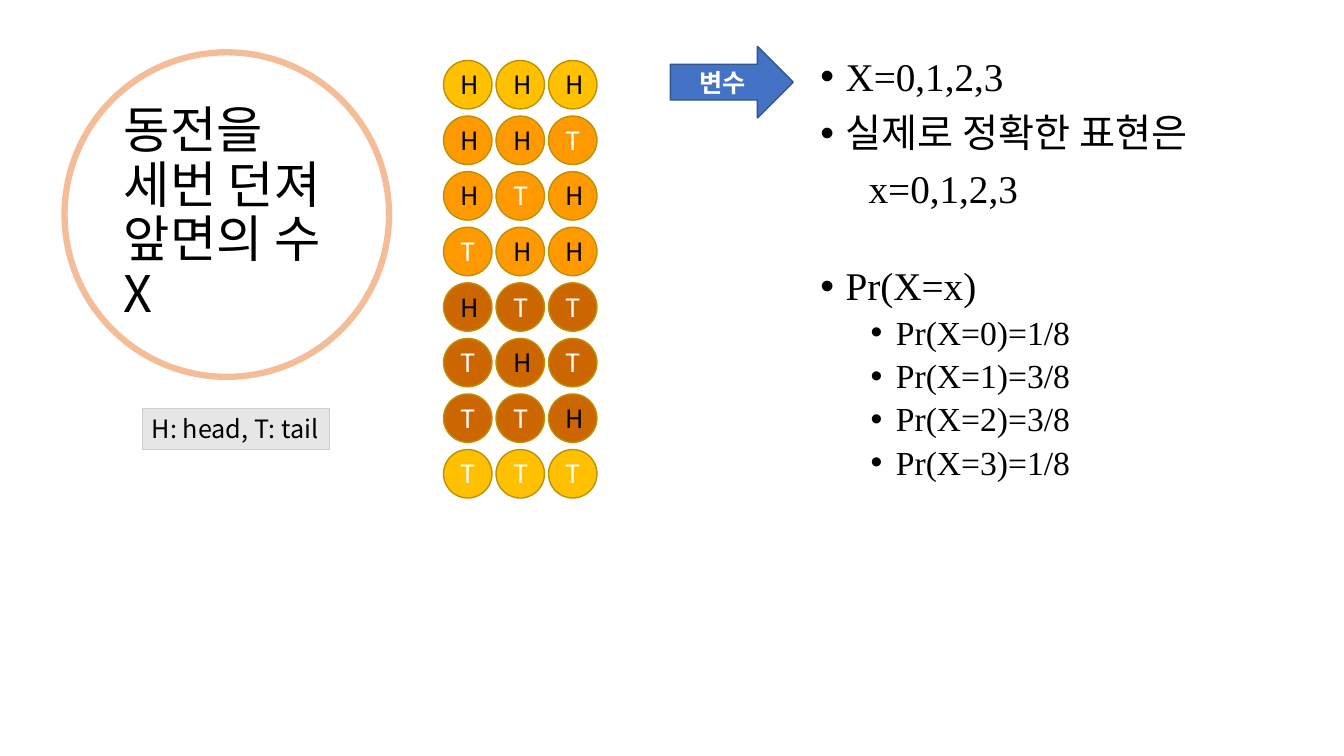
from pptx import Presentation
from pptx.dml.color import RGBColor
from pptx.enum.shapes import MSO_SHAPE
from pptx.enum.text import MSO_ANCHOR, PP_ALIGN
from pptx.oxml.ns import qn
from pptx.util import Pt
from lxml import etree

OVAL, RECTANGLE, ARROW = MSO_SHAPE.OVAL, MSO_SHAPE.RECTANGLE, MSO_SHAPE.RIGHT_ARROW
MIDDLE, TOP = MSO_ANCHOR.MIDDLE, MSO_ANCHOR.TOP
LEFT, CENTER = PP_ALIGN.LEFT, PP_ALIGN.CENTER
SANS, SERIF = "Noto Sans CJK KR", "Times New Roman"
COLORS = {
    "black": "000000", "white": "FFFFFF", "ring": "ED7D31",
    "arrow": "4472C4", "arrow_edge": "325491", "coin_edge": "BF9000",
    "gold": "FFC000", "orange": "FF9900", "brown": "CC6600",
    "legend": "E7E6E6", "legend_edge": "D0CECE",
}

TITLE = "동전을\v세번 던져\v앞면의 수\vX"
LEGEND = "H: head, T: tail"
ARROW_LABEL = "변수"
TOSSES = [
    ("HHH", "gold"), ("HHT", "orange"), ("HTH", "orange"), ("THH", "orange"),
    ("HTT", "brown"), ("THT", "brown"), ("TTH", "brown"), ("TTT", "gold"),
]
# text, size, left margin, first-line indent, space before, bulleted
NOTES = [
    ("X=0,1,2,3", 28, 18, -18, 10, True),
    ("실제로 정확한 표현은", 28, 18, -18, 10, True),
    ("x=0,1,2,3", 28, 34.5, 0, 10, False),
    ("Pr(X=x)", 28, 18, -18, 39, True),
] + [(f"Pr(X={heads})={ways}/8", 24, 54, -18, 5, True)
     for heads, ways in enumerate((1, 3, 3, 1))]

COIN_LEFT, COIN_TOP, COIN_SIZE = 316.8, 43.2, 34.6
COLUMN_STEP, ROW_STEP = 37.5, 39.7


def rgb(name):
    return RGBColor.from_string(COLORS[name])


def format_para(para, size, color, font=SANS, align=LEFT, bold=False):
    para.alignment = align
    for span in para.runs:
        span.font.size = Pt(size)
        span.font.name = font
        span.font.bold = bold
        span.font.color.rgb = rgb(color)
        east_asian = etree.SubElement(span._r.get_or_add_rPr(), qn("a:ea"))
        east_asian.set("typeface", SANS)


def indent_para(para, margin, indent, bulleted):
    props = para._p.get_or_add_pPr()
    props.set("marL", str(Pt(margin)))
    props.set("indent", str(Pt(indent)))
    if bulleted:
        etree.SubElement(props, qn("a:buFont")).set("typeface", "Arial")
        etree.SubElement(props, qn("a:buChar")).set("char", "•")


def add_text_box(page, left, top, width, height, anchor):
    frame = page.shapes.add_textbox(Pt(left), Pt(top), Pt(width), Pt(height)).text_frame
    frame.word_wrap = True
    frame.vertical_anchor = anchor
    return frame


def add_shape(shapes, kind, left, top, width, height, fill, edge, edge_width):
    shape = shapes.add_shape(kind, Pt(left), Pt(top), Pt(width), Pt(height))
    shape.shadow.inherit = False
    if fill:
        shape.fill.solid()
        shape.fill.fore_color.rgb = rgb(fill)
    else:
        shape.fill.background()
    shape.line.color.rgb = rgb(edge)
    shape.line.width = Pt(edge_width)
    return shape


def label(shape, text, color, align=CENTER, bold=False):
    frame = shape.text_frame
    frame.text = text
    frame.vertical_anchor = MIDDLE
    format_para(frame.paragraphs[0], 18, color, align=align, bold=bold)


def add_title(page):
    frame = add_text_box(page, 81.4, 25.9, 200, 254, MIDDLE)
    frame.text = TITLE
    para = frame.paragraphs[0]
    para.line_spacing = 0.9
    format_para(para, 36, "black")


def add_notes(page):
    frame = add_text_box(page, 578.9, 37.4, 363, 312, TOP)
    for number, (text, size, margin, indent, before, bulleted) in enumerate(NOTES):
        para = frame.add_paragraph() if number else frame.paragraphs[0]
        para.text = text
        para.line_spacing = 0.9
        para.space_before = Pt(before)
        format_para(para, size, "black", SERIF)
        indent_para(para, margin, indent, bulleted)


def add_ring(page):
    ring = add_shape(page.shapes, OVAL, 46.1, 37.4, 231.8, 231.8, None, "ring", 4.5)
    tint = ring.line._ln.find(".//" + qn("a:srgbClr"))
    etree.SubElement(tint, qn("a:alpha")).set("val", "50000")


def add_coins(page):
    for row, (faces, fill) in enumerate(TOSSES):
        group = page.shapes.add_group_shape()
        for column, face in enumerate(faces):
            coin = add_shape(group.shapes, OVAL, COIN_LEFT + column * COLUMN_STEP,
                             COIN_TOP + row * ROW_STEP, COIN_SIZE, COIN_SIZE,
                             fill, "coin_edge", 1)
            label(coin, face, "black" if face == "H" else "white")


def main():
    deck = Presentation()
    deck.slide_width, deck.slide_height = Pt(960), Pt(540)
    page = deck.slides.add_slide(deck.slide_layouts[6])
    add_title(page)
    add_notes(page)
    add_ring(page)
    arrow = add_shape(page.shapes, ARROW, 478.8, 33.1, 87.8, 51.1,
                      "arrow", "arrow_edge", 1)
    label(arrow, ARROW_LABEL, "white", bold=True)
    add_coins(page)
    legend = add_shape(page.shapes, RECTANGLE, 101.5, 291.7, 133.9, 29.1,
                       "legend", "legend_edge", 0.75)
    legend.text_frame.word_wrap = False
    label(legend, LEGEND, "black", align=LEFT)
    deck.save("out.pptx")


if __name__ == "__main__":
    main()
